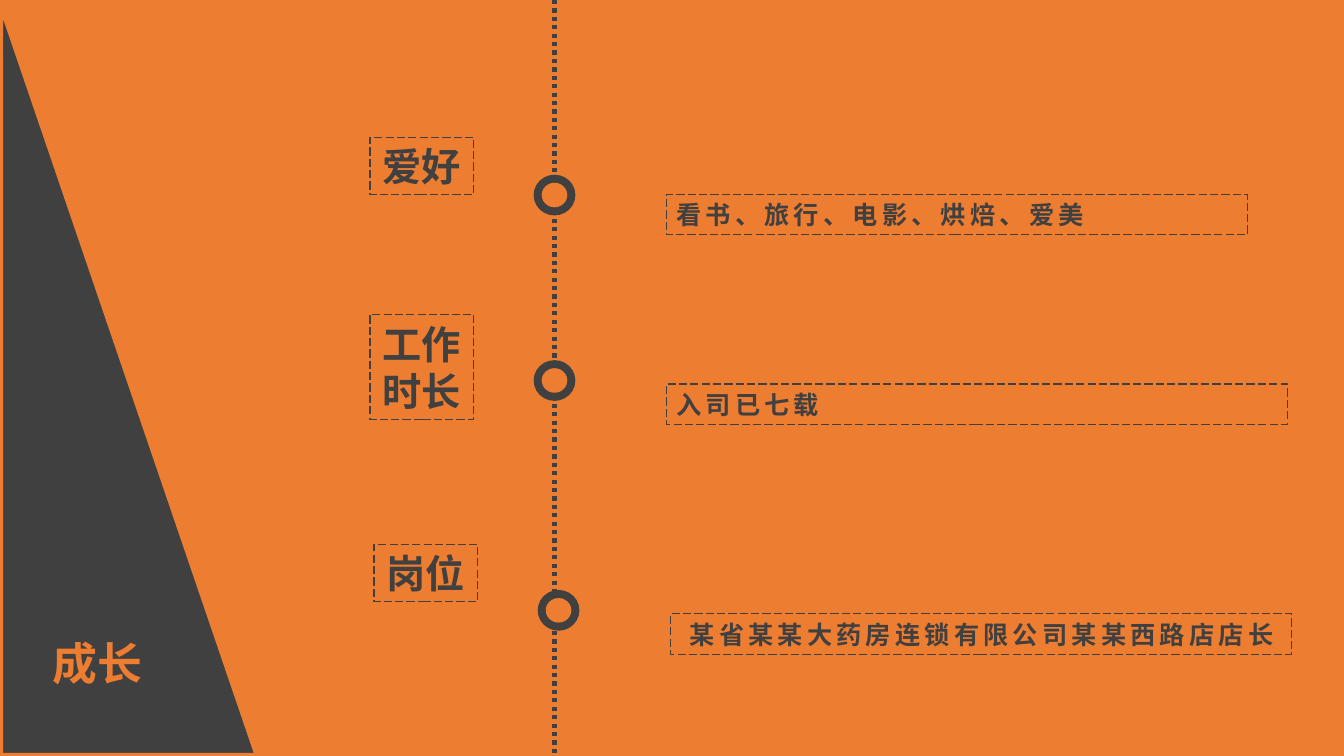
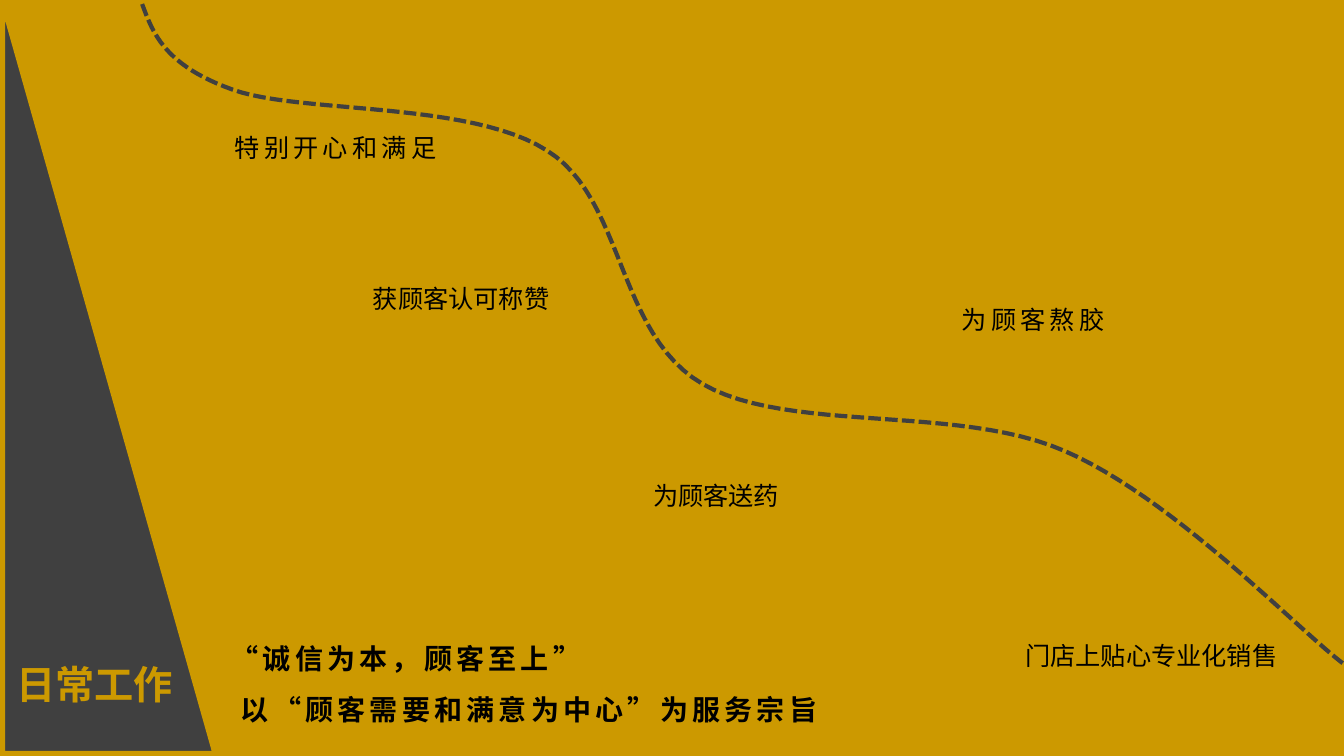
import dataclasses
import lxml.etree
import pptx
import pptx.dml.color
import pptx.enum.dml
import pptx.enum.lang
import pptx.enum.shapes
import pptx.enum.text
import pptx.oxml.ns
import pptx.util

Inches = pptx.util.Inches
Pt = pptx.util.Pt
Dash = pptx.enum.dml.MSO_LINE
Kind = pptx.enum.shapes.MSO_SHAPE
Align = pptx.enum.text.PP_ALIGN


@dataclasses.dataclass(frozen=True)
class Theme:
    dark: pptx.dml.color.RGBColor = pptx.dml.color.RGBColor.from_string("404040")
    black: pptx.dml.color.RGBColor = pptx.dml.color.RGBColor.from_string("000000")
    orange: pptx.dml.color.RGBColor = pptx.dml.color.RGBColor.from_string("ED7D31")
    gold: pptx.dml.color.RGBColor = pptx.dml.color.RGBColor.from_string("CC9900")
    font: str = "Noto Sans CJK SC"
    latin: str = "Calibri"
    big: int = 32
    head: int = 28
    motto: int = 20
    body: int = 18


theme = Theme()
deck = pptx.Presentation()
deck.slide_width = Inches(13.33)
deck.slide_height = Inches(7.5)


def write(shape, lines, size, color, bold=False, align=Align.LEFT,
          track=0, space=1.0, font=theme.font):
    """Fill a shape with one styled run per line."""
    frame = shape.text_frame
    frame.word_wrap = True
    frame.auto_size = pptx.enum.text.MSO_AUTO_SIZE.NONE
    frame.vertical_anchor = pptx.enum.text.MSO_ANCHOR.MIDDLE
    for num, line in enumerate(lines):
        para = frame.add_paragraph() if num else frame.paragraphs[0]
        para.alignment = align
        para.line_spacing = space
        run = para.add_run()
        run.text = line
        run.font.size = Pt(size)
        run.font.bold = bold
        run.font.name = font
        run.font.color.rgb = color
        run.font.language_id = pptx.enum.lang.MSO_LANGUAGE_ID.SIMPLIFIED_CHINESE
        props = run._r.get_or_add_rPr()
        if track:
            props.set("spc", str(track * 100))
        east = lxml.etree.SubElement(props, pptx.oxml.ns.qn("a:ea"))
        east.set("typeface", theme.font)


def draw(slide, kind, box, fill, edge, width, dash=None):
    """Add a flat preset shape; box is left, top, width, height in inches."""
    shape = slide.shapes.add_shape(kind, *map(Inches, box))
    shape.shadow.inherit = False
    if fill is None:
        shape.fill.background()
    else:
        shape.fill.solid()
        shape.fill.fore_color.rgb = fill
    shape.line.color.rgb = edge
    shape.line.width = Pt(width)
    if dash is not None:
        shape.line.dash_style = dash
    return shape


# Shared look: ground, corner wedge and title
pages = []
for ground, wedge, name, place, size in (
    (theme.orange, (0, 0, 2.56, 7.5), "成长", (0.1, 6.25, 1.73, 0.64), theme.big),
    (theme.gold, (0.02, -0.02, 2.12, 7.5), "日常工作", (0, 6.5, 1.88, 0.57), theme.head),
):
    slide = deck.slides.add_slide(deck.slide_layouts[5])
    slide.background.fill.solid()
    slide.background.fill.fore_color.rgb = ground
    draw(slide, Kind.RIGHT_TRIANGLE, wedge, theme.dark, ground, 4.5)
    title = slide.shapes.title
    title.left, title.top, title.width, title.height = map(Inches, place)
    write(title, [name], size, ground, bold=True, align=Align.CENTER)
    slide.shapes.element.append(title.element)  # title above the wedge
    pages.append(slide)
growth, daily = pages

# Growth: dotted time line
line = growth.shapes.add_connector(
    pptx.enum.shapes.MSO_CONNECTOR.STRAIGHT,
    Inches(5.5), Inches(0), Inches(5.5), Inches(7.5))
line.line.color.rgb = theme.dark
line.line.width = Pt(3)
line.line.dash_style = Dash.ROUND_DOT
lxml.etree.SubElement(line.element.spPr, pptx.oxml.ns.qn("a:effectLst"))

# Growth: ring, label and note of each stop
# shift, ring top, label, label top, label height, note, note top, note width, inset
stops = (
    (0, 1.74, "爱好", 1.36, 0.57, "看书、旅行、电影、烘焙、爱美", 1.93, 5.76, 0.1),
    (0, 3.58, "工作时长", 3.12, 1.04, "入司已七载", 3.81, 6.16, 0.1),
    (0.04, 5.86, "岗位", 5.4, 0.57,
     "某省某某大药房连锁有限公司某某西路店店长", 6.09, 6.16, 0.19),
)
for shift, top, label, high, tall, note, low, wide, inset in stops:
    draw(growth, Kind.FLOWCHART_CONNECTOR, (5.3 + shift, top, 0.4, 0.39),
         theme.dark, theme.dark, 1)
    draw(growth, Kind.OVAL, (5.38 + shift, top + 0.08, 0.24, 0.23),
         theme.orange, theme.orange, 1)
    tag = draw(growth, Kind.RECTANGLE, (3.67 + shift, high, 1.03, tall),
               None, theme.dark, 0.75, Dash.LONG_DASH)
    write(tag, [label], theme.head, theme.dark, bold=True, align=Align.CENTER)
    text = draw(growth, Kind.RECTANGLE, (6.61 + shift, low, wide, 0.4),
                None, theme.dark, 0.75, Dash.LONG_DASH)
    text.text_frame.margin_left = Inches(inset)
    write(text, [note], theme.body, theme.dark, bold=True, track=3)

# Daily work: dashed road, sampled from cubic curves up to the slide edge
start = (1.41, 0.04)
curves = (
    ((1.52, 0.34), (1.64, 0.65), (2.31, 0.89)),
    ((2.98, 1.13), (4.65, 1), (5.42, 1.49)),
    ((6.2, 1.97), (6.11, 3.31), (6.97, 3.81)),
    ((7.82, 4.3), (9.49, 4.01), (10.55, 4.47)),
    ((11.6, 4.92), (12.81, 6.18), (13.28, 6.55)),
)
steps = 24
dots = []
last = start
for one, two, end in curves:
    for step in range(1, steps + 1):
        t = step / steps
        u = 1 - t
        dots.append(tuple(
            Inches(u**3 * a + 3 * u * u * t * b + 3 * u * t * t * c + t**3 * d)
            for a, b, c, d in zip(last, one, two, end)))
    last = end
dots.append((Inches(13.33), Inches(6.59)))
path = daily.shapes.build_freeform(*map(Inches, start))
path.add_line_segments(dots, close=False)
road = path.convert_to_shape()
road.shadow.inherit = False
road.fill.background()
road.line.color.rgb = theme.dark
road.line.width = Pt(3)
road.line.dash_style = Dash.SQUARE_DOT

# Daily work: notes along the road
for note, left, top, wide, font, track in (
    ("特别开心和满足", 2.23, 1.26, 2.81, theme.font, 3),
    ("获顾客认可称赞", 3.6, 2.76, 2.9, theme.latin, 0),
    ("为顾客熬胶", 9.44, 2.97, 2.81, theme.font, 3),
    ("为顾客送药", 6.38, 4.72, 2.1, theme.latin, 0),
    ("门店上贴心专业化销售", 10.07, 6.3, 2.9, theme.latin, 0),
):
    text = daily.shapes.add_textbox(*map(Inches, (left, top, wide, 0.4)))
    write(text, [note], theme.body, theme.black, track=track, font=font)

# Daily work: motto
motto = daily.shapes.add_textbox(*map(Inches, (2.19, 6.15, 6.67, 1.1)))
write(motto, ["“诚信为本，顾客至上”", "以“顾客需要和满意为中心”为服务宗旨"],
      theme.motto, theme.black, bold=True, track=3, space=1.5)
motto.text_frame.paragraphs[1]._p.get_or_add_pPr().set("marL", str(Inches(0.1)))

deck.save("out.pptx")
